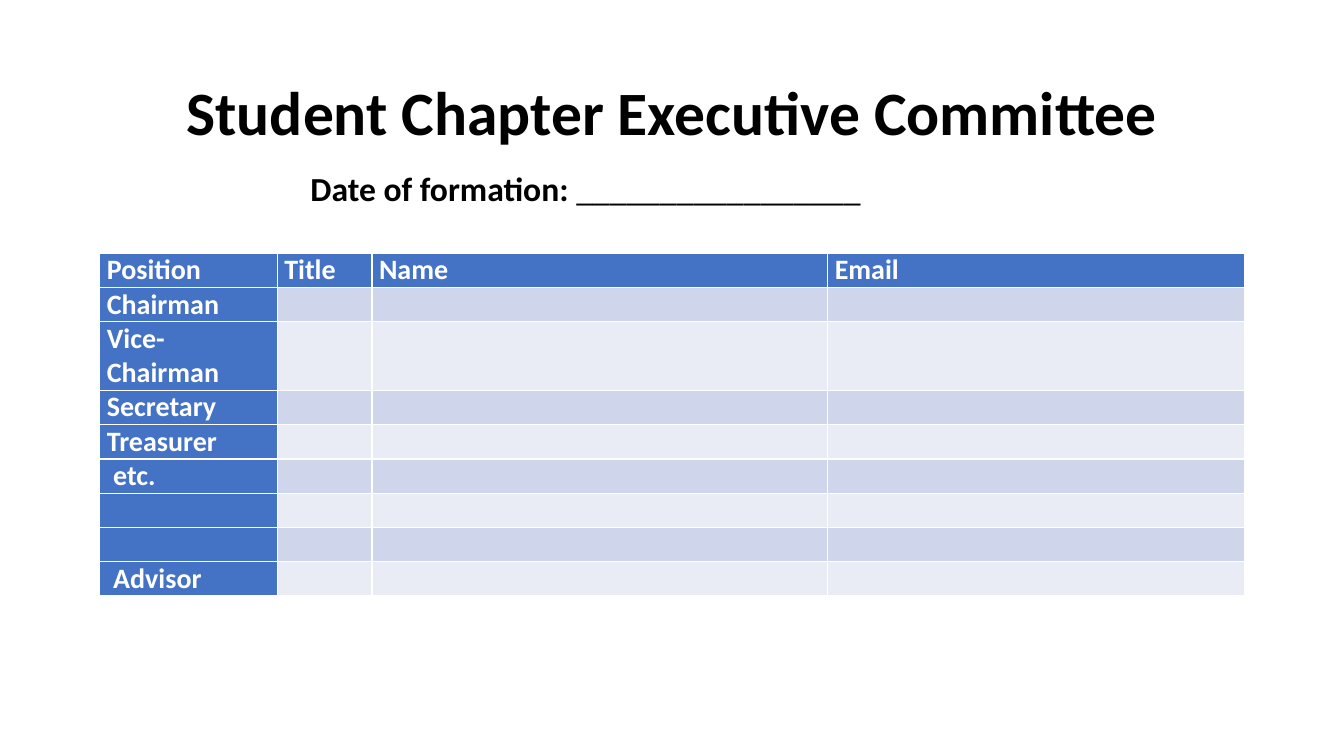
import pptx
import pptx.util
import pptx.dml.color
import pptx.enum.text
from dataclasses import dataclass

TITLE = "Student Chapter Executive Committee"
DATE_LABEL = "Date of formation: "
DATE_BLANK = "_" * 17
HEADERS = ["Position", "Title", "Name", "Email"]
POSITIONS = ["Chairman", "Vice-Chairman", "Secretary", "Treasurer",
             " etc.", "", "", " Advisor"]

SLIDE_SIZE = (13.33, 7.5)
TITLE_BOX = (1.67, 0.5, 10, 1.03)
DATE_BOX = (2.98, 1.66, 5.73, 0.46)
TABLE_ORIGIN = (0.99, 2.51)
COLUMN_WIDTHS = [1.76, 0.94, 4.52, 4.13]
ROW_HEIGHT = 0.34
TALL_ROWS = {"Vice-Chairman": 2}
CELL_MARGIN = 0.07


@dataclass(frozen=True)
class Theme:
    font: str = "Calibri"
    text: str = "000000"
    header_text: str = "FFFFFF"
    header_fill: str = "4472C4"
    bands: tuple = ("CFD5EA", "E9EBF5")
    title_size: int = 44
    date_size: int = 24
    table_size: int = 20


THEME = Theme()
inches = pptx.util.Inches


def rgb(value):
    return pptx.dml.color.RGBColor.from_string(value)


def add_text(paragraph, text, size, color=THEME.text, bold=True):
    run = paragraph.add_run()
    run.text = text
    run.font.name = THEME.font
    run.font.size = pptx.util.Pt(size)
    run.font.bold = bold
    run.font.color.rgb = rgb(color)


def add_title(slide):
    title = slide.shapes.title
    title.left, title.top, title.width, title.height = map(inches, TITLE_BOX)
    frame = title.text_frame
    frame.auto_size = pptx.enum.text.MSO_AUTO_SIZE.NONE
    frame.vertical_anchor = pptx.enum.text.MSO_ANCHOR.BOTTOM
    paragraph = frame.paragraphs[0]
    paragraph.alignment = pptx.enum.text.PP_ALIGN.CENTER
    paragraph.line_spacing = 0.9
    add_text(paragraph, TITLE, THEME.title_size)


def add_date(slide):
    frame = slide.shapes.add_textbox(*map(inches, DATE_BOX)).text_frame
    frame.word_wrap = False
    frame.auto_size = pptx.enum.text.MSO_AUTO_SIZE.SHAPE_TO_FIT_TEXT
    paragraph = frame.paragraphs[0]
    paragraph.line_spacing = 0.9
    paragraph.space_before = pptx.util.Pt(10)
    add_text(paragraph, DATE_LABEL, THEME.date_size)
    add_text(paragraph, DATE_BLANK, THEME.date_size, bold=False)


def add_committee_table(slide):
    rows = [HEADERS] + [[name, "", "", ""] for name in POSITIONS]
    heights = [ROW_HEIGHT * TALL_ROWS.get(row[0], 1) for row in rows]
    table = slide.shapes.add_table(
        len(rows), len(HEADERS), *map(inches, TABLE_ORIGIN),
        inches(sum(COLUMN_WIDTHS)), inches(sum(heights))).table
    table.first_col = True
    for column, width in zip(table.columns, COLUMN_WIDTHS):
        column.width = inches(width)
    for row_index, values in enumerate(rows):
        table.rows[row_index].height = inches(heights[row_index])
        for column_index, value in enumerate(values):
            cell = table.cell(row_index, column_index)
            cell.margin_left = cell.margin_right = inches(CELL_MARGIN)
            cell.margin_top = cell.margin_bottom = 0
            is_header = row_index == 0 or column_index == 0
            band = THEME.bands[(row_index - 1) % 2]
            cell.fill.solid()
            cell.fill.fore_color.rgb = rgb(THEME.header_fill if is_header else band)
            if value:
                add_text(cell.text_frame.paragraphs[0], value,
                         THEME.table_size, color=THEME.header_text)


def main():
    presentation = pptx.Presentation()
    presentation.slide_width, presentation.slide_height = map(inches, SLIDE_SIZE)
    slide = presentation.slides.add_slide(presentation.slide_layouts[5])
    add_title(slide)
    add_committee_table(slide)
    add_date(slide)
    presentation.save("out.pptx")


if __name__ == "__main__":
    main()
